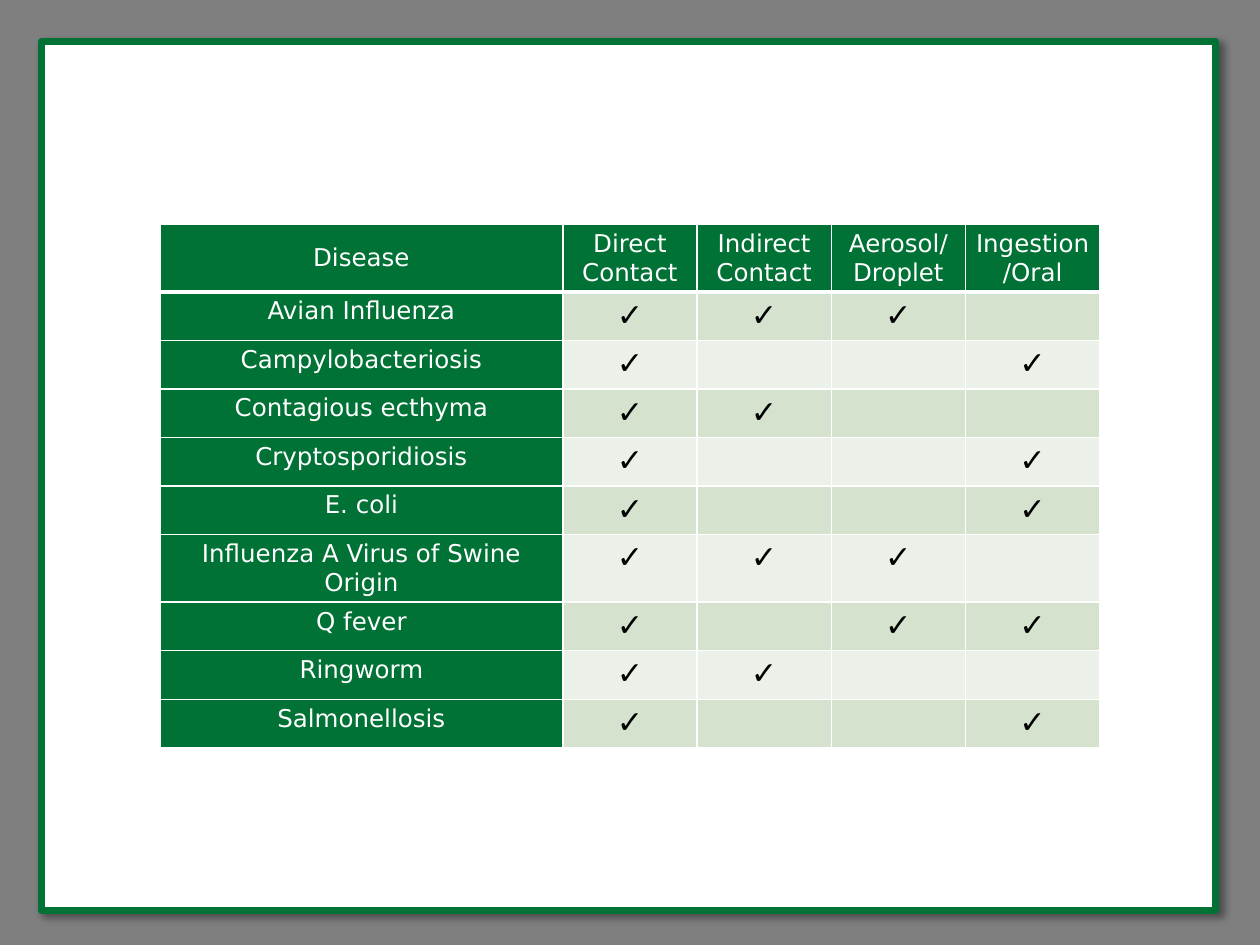
from dataclasses import dataclass

from lxml.etree import SubElement
from pptx import Presentation
from pptx.dml.color import RGBColor
from pptx.enum.shapes import MSO_SHAPE
from pptx.enum.text import MSO_ANCHOR, PP_ALIGN
from pptx.oxml import parse_xml
from pptx.oxml.ns import nsdecls, qn
from pptx.util import Inches, Pt


@dataclass(frozen=True)
class Theme:
    """Colours, font and sizes of the slide."""

    backdrop: str = "7F7F7F"
    green: str = "007236"
    white: str = "FFFFFF"
    black: str = "000000"
    bands: tuple = ("D4E2CE", "EBF1E8")
    font: str = "DejaVu Sans"
    label_size: int = 14
    check_size: int = 18
    frame_width: int = 4
    rule_width: int = 1
    header_rule_width: int = 3


THEME = Theme()
SLIDE_WIDTH, SLIDE_HEIGHT = Inches(10), Inches(7.5)
COLUMN_SHARES = (3, 1, 1, 1, 1)
ROW_HEIGHT, TALL_ROW_HEIGHT = Inches(0.38), Inches(0.53)
ROUTES = ("Direct Contact", "Indirect Contact", "Aerosol/ Droplet", "Ingestion/Oral")
DIRECT, INDIRECT, AEROSOL, INGESTION = ROUTES
WRAPPED_DISEASE = "Influenza A Virus of Swine Origin"
DISEASES = {
    "Avian Influenza": (DIRECT, INDIRECT, AEROSOL),
    "Campylobacteriosis": (DIRECT, INGESTION),
    "Contagious ecthyma": (DIRECT, INDIRECT),
    "Cryptosporidiosis": (DIRECT, INGESTION),
    "E. coli": (DIRECT, INGESTION),
    WRAPPED_DISEASE: (DIRECT, INDIRECT, AEROSOL),
    "Q fever": (DIRECT, AEROSOL, INGESTION),
    "Ringworm": (DIRECT, INDIRECT),
    "Salmonellosis": (DIRECT, INGESTION),
}


def share_box(left, top, width, height):
    """Turn shares of the slide into a box of lengths."""
    return (int(SLIDE_WIDTH * left), int(SLIDE_HEIGHT * top),
            int(SLIDE_WIDTH * width), int(SLIDE_HEIGHT * height))


def write_text(cell, text, size=THEME.label_size, color=THEME.white, bold=False,
               anchor=MSO_ANCHOR.TOP):
    """Write centred text in a table cell."""
    cell.vertical_anchor = anchor
    paragraph = cell.text_frame.paragraphs[0]
    paragraph.alignment = PP_ALIGN.CENTER
    run = paragraph.add_run()
    run.text = text
    run.font.name = THEME.font
    run.font.size = Pt(size)
    run.font.bold = bold
    run.font.color.rgb = RGBColor.from_string(color)


def style_cell(cell, fill, top=THEME.rule_width, bottom=THEME.rule_width):
    """Set the margins, fill and four borders of a cell."""
    cell.margin_left = cell.margin_right = Inches(0.07)
    cell.margin_top = cell.margin_bottom = Inches(0.04)
    cell.fill.solid()
    cell.fill.fore_color.rgb = RGBColor.from_string(fill)
    properties = cell._tc.get_or_add_tcPr()
    widths = {"lnL": THEME.rule_width, "lnR": THEME.rule_width, "lnT": top, "lnB": bottom}
    for index, (side, width) in enumerate(widths.items()):
        properties.insert(index, parse_xml(
            f'<a:{side} {nsdecls("a")} w="{Pt(width)}"><a:solidFill>'
            f'<a:srgbClr val="{THEME.white}"/></a:solidFill></a:{side}>'))


def add_shadow(shape):
    """Give a shape a soft shadow to the lower right."""
    shape.shadow.inherit = False
    effects = shape._element.spPr.find(qn("a:effectLst"))
    shadow = SubElement(effects, qn("a:outerShdw"), blurRad=str(Pt(4)), dist=str(Pt(3)),
                        dir="2700000", algn="tl", rotWithShape="0")
    color = SubElement(shadow, qn("a:srgbClr"), val=THEME.black)
    SubElement(color, qn("a:alpha"), val="40000")


def add_frame(slide, box):
    """Draw the white panel with its green outline."""
    frame = slide.shapes.add_shape(MSO_SHAPE.RECTANGLE, *box)
    frame.fill.solid()
    frame.fill.fore_color.rgb = RGBColor.from_string(THEME.white)
    frame.line.color.rgb = RGBColor.from_string(THEME.green)
    frame.line.width = Pt(THEME.frame_width)
    add_shadow(frame)


def add_disease_table(slide, box):
    """Build the table of diseases and routes of transmission."""
    table = slide.shapes.add_table(len(DISEASES) + 1, len(COLUMN_SHARES), *box).table
    for column, share in zip(table.columns, COLUMN_SHARES):
        column.width = int(box[2] * share / sum(COLUMN_SHARES))
    for row, name in zip(table.rows, ("Disease", *DISEASES)):
        row.height = TALL_ROW_HEIGHT if name in ("Disease", WRAPPED_DISEASE) else ROW_HEIGHT

    for column, heading in enumerate(("Disease", *ROUTES)):
        cell = table.cell(0, column)
        style_cell(cell, THEME.green, bottom=THEME.header_rule_width)
        write_text(cell, heading, anchor=MSO_ANCHOR.MIDDLE)

    for row, (disease, routes) in enumerate(DISEASES.items(), start=1):
        top = THEME.header_rule_width if row == 1 else THEME.rule_width
        style_cell(table.cell(row, 0), THEME.green, top=top)
        write_text(table.cell(row, 0), disease)
        for column, route in enumerate(ROUTES, start=1):
            cell = table.cell(row, column)
            style_cell(cell, THEME.bands[(row - 1) % 2], top=top)
            if route in routes:
                write_text(cell, "✓", size=THEME.check_size, color=THEME.black, bold=True)


def main():
    """Build the slide and save it."""
    presentation = Presentation()
    presentation.slide_width, presentation.slide_height = SLIDE_WIDTH, SLIDE_HEIGHT
    slide = presentation.slides.add_slide(presentation.slide_layouts[6])
    slide.background.fill.solid()
    slide.background.fill.fore_color.rgb = RGBColor.from_string(THEME.backdrop)
    add_frame(slide, share_box(0.033, 0.044, 0.932, 0.92))
    add_disease_table(slide, share_box(0.127, 0.2375, 0.746, 0.555))
    presentation.save("out.pptx")


if __name__ == "__main__":
    main()
